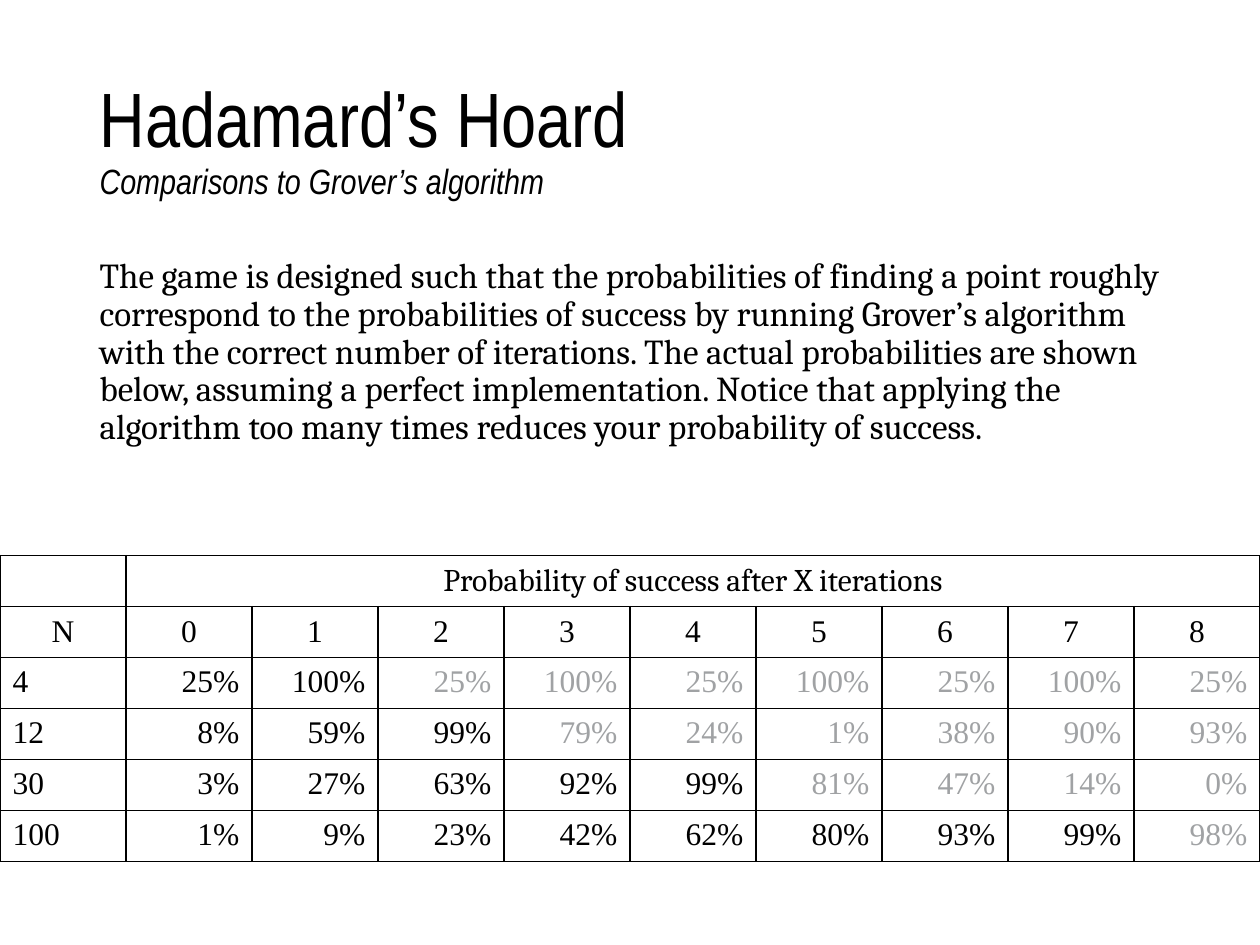
from lxml import etree
from pptx import Presentation
from pptx import util as u
from pptx.dml.color import RGBColor
from pptx.enum import text
from pptx.oxml import ns

COLORS = {"ink": "000000", "dim": "A0A2A4"}
FONTS = {"head": "Arial Narrow", "body": "Cambria", "data": "Times New Roman"}
LEFT, MID, RIGHT = text.PP_ALIGN.LEFT, text.PP_ALIGN.CENTER, text.PP_ALIGN.RIGHT

INTRO = (
    "The game is designed such that the probabilities of finding a point roughly "
    "correspond to the probabilities of success by running Grover’s algorithm "
    "with the correct number of iterations. The actual probabilities are shown "
    "below, assuming a perfect implementation. Notice that applying the "
    "algorithm too many times reduces your probability of success."
)

# N: (best number of iterations, success in percent after 0 to 8 iterations)
ODDS = {
    4: (1, [25, 100, 25, 100, 25, 100, 25, 100, 25]),
    12: (2, [8, 59, 99, 79, 24, 1, 38, 90, 93]),
    30: (4, [3, 27, 63, 92, 99, 81, 47, 14, 0]),
    100: (7, [1, 9, 23, 42, 62, 80, 93, 99, 98]),
}


class Deck:
    def __init__(self, prs):
        self.slide = prs.slides.add_slide(prs.slide_layouts[1])

    def style(self, run, size, face, color="ink", slant=False):
        font = run.font
        font.size, font.name = u.Pt(size), FONTS[face]
        font.bold, font.italic = False, slant
        font.color.rgb = RGBColor.from_string(COLORS[color])

    def place(self, shape, box, words, anchor):
        shape.left, shape.top, shape.width, shape.height = map(u.Inches, box)
        frame = shape.text_frame
        frame.text = words
        frame.word_wrap = True
        frame.auto_size = text.MSO_AUTO_SIZE.NONE
        frame.vertical_anchor = anchor
        para = frame.paragraphs[0]
        para.alignment, para.line_spacing = LEFT, 0.9
        para.space_before = u.Pt(0)
        return para

    def title(self, box, head, sub):
        para = self.place(self.slide.shapes.title, box, f"{head}\v{sub}",
                          text.MSO_ANCHOR.MIDDLE)
        self.style(para.runs[0], 44, "head")
        self.style(para.runs[1], 20, "head", slant=True)

    def body(self, box, words):
        para = self.place(self.slide.placeholders[1], box, words,
                          text.MSO_ANCHOR.TOP)
        props = para._p.get_or_add_pPr()
        props.set("marL", "0")
        props.set("indent", "0")
        etree.SubElement(props, ns.qn("a:buNone"))
        self.style(para.runs[0], 20, "body")

    def table(self, box, rows, cols):
        grid = self.slide.shapes.add_table(rows, cols, *map(u.Inches, box)).table
        grid.first_row = grid.horz_banding = False
        for cell in grid.iter_cells():
            cell.fill.background()
            self.edge(cell)
        return grid

    def edge(self, cell):
        props = cell._tc.get_or_add_tcPr()
        for spot, side in enumerate(("lnL", "lnR", "lnT", "lnB")):
            line = etree.Element(ns.qn(f"a:{side}"), w=str(u.Pt(1)))
            fill = etree.SubElement(line, ns.qn("a:solidFill"))
            etree.SubElement(fill, ns.qn("a:srgbClr"), val=COLORS["ink"])
            props.insert(spot, line)

    def cell(self, cell, words, align, face="data", color="ink"):
        cell.text_frame.text = words
        if align == MID:
            cell.vertical_anchor = text.MSO_ANCHOR.MIDDLE
        para = cell.text_frame.paragraphs[0]
        para.alignment = align
        self.style(para.runs[0], 18, face, color)


def main():
    prs = Presentation()
    prs.slide_width, prs.slide_height = u.Inches(10), u.Inches(7.5)
    deck = Deck(prs)

    # Title and introduction
    deck.title((0.69, 0.4, 8.62, 1.45), "Hadamard’s Hoard",
               "Comparisons to Grover’s algorithm")
    deck.body((0.69, 2, 8.62, 4.37), INTRO)

    # Table headings
    grid = deck.table((0, 4.41, 10, 2.43), 6, 10)
    grid.cell(0, 1).merge(grid.cell(0, 9))
    deck.cell(grid.cell(0, 1), "Probability of success after X iterations",
              MID, "body")
    for col, label in enumerate(["N", *range(9)]):
        deck.cell(grid.cell(1, col), str(label), MID)

    # Probabilities, dimmed past the best number of iterations
    for row, (size, (best, odds)) in enumerate(ODDS.items(), 2):
        deck.cell(grid.cell(row, 0), str(size), LEFT)
        for step, odd in enumerate(odds):
            deck.cell(grid.cell(row, step + 1), f"{odd}%", RIGHT,
                      color="dim" if step > best else "ink")

    prs.save("out.pptx")


if __name__ == "__main__":
    main()
